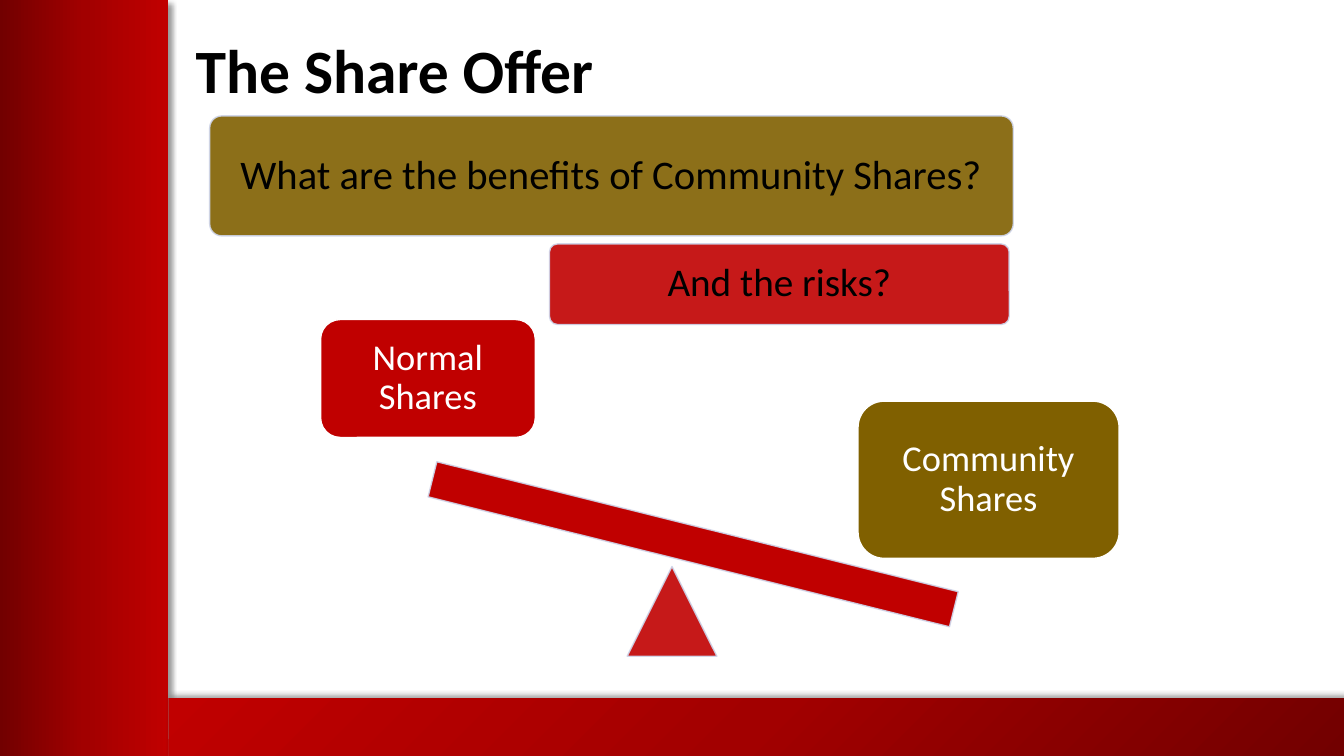
from pptx import Presentation
from pptx.dml.color import RGBColor
from pptx.enum.shapes import MSO_SHAPE
from pptx.enum.text import MSO_ANCHOR, MSO_AUTO_SIZE, PP_ALIGN
from pptx.oxml import parse_xml
from pptx.oxml.ns import nsdecls, qn
from pptx.util import Inches, Pt

COLORS = {
    "red": "C00000",
    "mid_red": "A20000",
    "dark_red": "720000",
    "olive": "806000",
    "outline": "CFD5EA",
    "black": "000000",
    "white": "FFFFFF",
}
FONT = "Calibri"
GRADIENT_STOPS = ((0, "dark_red"), (50, "mid_red"), (100, "red"))
LEFT_TO_RIGHT = '<a:lin ang="0" scaled="0"/>'
FROM_BOTTOM_RIGHT = '<a:path path="circle"><a:fillToRect l="100000" t="100000"/></a:path>'


def rgb(color):
    return RGBColor.from_string(COLORS[color])


def set_format(target, values):
    for name, value in values.items():
        setattr(target, name, value)


def set_opacity(fill_parent, percent):
    color = fill_parent.find(qn("a:solidFill"))[0]
    color.append(parse_xml(f'<a:alpha {nsdecls("a")} val="{percent * 1000}"/>'))


def add_plain_shape(slide, kind, box):
    shape = slide.shapes.add_shape(kind, *map(Inches, box))
    shape.shadow.inherit = False
    return shape


def add_bar(slide, box, direction, shadow_angle):
    """Border bar with a gradient and a soft shadow towards the page."""
    bar = add_plain_shape(slide, MSO_SHAPE.RECTANGLE, box)
    bar.line.fill.background()
    bar.fill.gradient()
    properties = bar._element.spPr
    stops = "".join(
        f'<a:gs pos="{position * 1000}"><a:srgbClr val="{COLORS[color]}"/></a:gs>'
        for position, color in GRADIENT_STOPS
    )
    properties.replace(
        properties.find(qn("a:gradFill")),
        parse_xml(f'<a:gradFill {nsdecls("a")} rotWithShape="1">'
                  f"<a:gsLst>{stops}</a:gsLst>{direction}</a:gradFill>"),
    )
    properties.find(qn("a:effectLst")).append(parse_xml(
        f'<a:outerShdw {nsdecls("a")} blurRad="{Pt(4)}" dist="{Pt(3)}" '
        f'dir="{shadow_angle * 60000}" rotWithShape="0">'
        f'<a:srgbClr val="{COLORS["black"]}"><a:alpha val="40000"/></a:srgbClr>'
        "</a:outerShdw>"
    ))


def add_figure(slide, kind, box, fill, outline="outline", opacity=100):
    figure = add_plain_shape(slide, kind, box)
    figure.fill.solid()
    figure.fill.fore_color.rgb = rgb(fill)
    figure.line.color.rgb = rgb(outline)
    figure.line.width = Pt(1)
    if opacity < 100:
        set_opacity(figure._element.spPr, opacity)
    if outline == "outline":
        set_opacity(figure._element.spPr.find(qn("a:ln")), 90)
    return figure


def write_text(shape, text, size, color, margin, align, bold=False):
    frame = shape.text_frame
    frame.text = text
    sides = ("margin_left", "margin_top", "margin_right", "margin_bottom")
    set_format(frame, {
        "word_wrap": True,
        "auto_size": MSO_AUTO_SIZE.NONE,
        "vertical_anchor": MSO_ANCHOR.MIDDLE,
        **dict.fromkeys(sides, Inches(margin)),
    })
    paragraph = frame.paragraphs[0]
    set_format(paragraph, {"alignment": align, "line_spacing": 0.9})
    font = paragraph.runs[0].font
    set_format(font, {"name": FONT, "size": Pt(size), "bold": bold})
    font.color.rgb = rgb(color)


def add_question(slide, text, box, fill, size):
    question = add_figure(slide, MSO_SHAPE.ROUNDED_RECTANGLE, box, fill, opacity=90)
    question.adjustments[0] = 0.1
    write_text(question, text, size, "black", 0.12, PP_ALIGN.CENTER)


def add_weight(slide, text, box, fill):
    weight = add_figure(slide, MSO_SHAPE.ROUNDED_RECTANGLE, box, fill, "white")
    write_text(weight, text, 26, "white", 0.11, PP_ALIGN.CENTER)


def main():
    presentation = Presentation()
    set_format(presentation, {"slide_width": Inches(13.33), "slide_height": Inches(7.5)})
    slide = presentation.slides.add_slide(presentation.slide_layouts[5])

    # Border
    add_bar(slide, (0, 0, 1.67, 7.5), LEFT_TO_RIGHT, 45)
    add_bar(slide, (1.67, 6.93, 11.66, 0.57), FROM_BOTTOM_RIGHT, 315)

    # Title
    title = slide.shapes.title
    set_format(title, {"left": Inches(1.84), "top": Inches(0),
                       "width": Inches(10.51), "height": Inches(1.45)})
    write_text(title, "The Share Offer", 44, "black", 0.1, PP_ALIGN.LEFT, bold=True)

    # Questions
    add_question(slide, "What are the benefits of Community Shares?",
                 (2.08, 1.15, 7.97, 1.19), "olive", 29)
    add_question(slide, "And the risks?", (5.45, 2.42, 4.56, 0.8), "red", 28)

    # Seesaw
    add_figure(slide, MSO_SHAPE.ISOSCELES_TRIANGLE, (6.22, 5.62, 0.89, 0.89), "red", opacity=90)
    plank = add_figure(slide, MSO_SHAPE.RECTANGLE, (4.21, 5.22, 5.33, 0.36), "red")
    plank.rotation = 14
    add_weight(slide, "Normal Shares", (3.18, 3.17, 2.13, 1.17), "red")
    add_weight(slide, "Community Shares", (8.51, 3.98, 2.59, 1.56), "olive")

    presentation.save("out.pptx")


if __name__ == "__main__":
    main()
